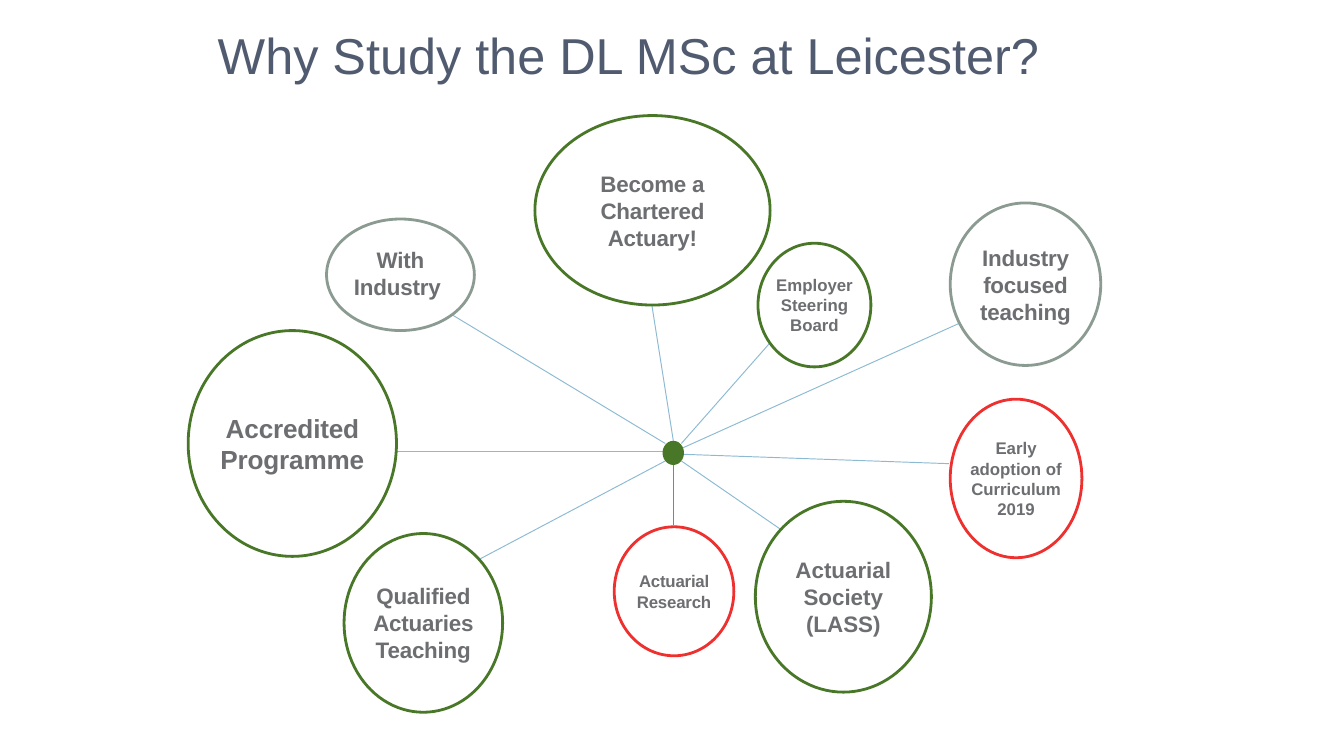
from typing import NamedTuple, Optional

from pptx import Presentation
from pptx.dml.color import RGBColor
from pptx.enum.shapes import MSO_CONNECTOR, MSO_SHAPE
from pptx.enum.text import MSO_ANCHOR, MSO_AUTO_SIZE, PP_ALIGN
from pptx.oxml.ns import qn
from pptx.shapes.autoshape import Shape
from pptx.slide import Slide
from pptx.util import Emu, Pt

PIXEL = 4572
COLORS = {
    "title": "515B70",
    "text": "6D6E71",
    "white": "FFFFFF",
    "green": "497728",
    "red": "EE302F",
    "grey": "8B9B92",
    "spoke": "8CBAD2",
    "dark_spoke": "828386",
}


class Bubble(NamedTuple):
    text: str
    left: int
    top: int
    width: int
    height: int
    outline: str
    size: int = 12
    spacing: Optional[str] = "-10"
    bottom_inset: int = 6


class Spoke(NamedTuple):
    start: tuple[int, int]
    end: tuple[int, int]
    color: str = "spoke"


BUBBLES = [
    Bubble("Early adoption of Curriculum 2019", 1414, 594, 196, 236, "red", 9, None),
    Bubble("Employer Steering Board", 1128, 362, 168, 184, "green", 9, None),
    Bubble("Industry focused teaching", 1414, 302, 224, 242, "grey"),
    Bubble("Actuarial Society (LASS)", 1124, 746, 262, 284, "green", 12, None),
    Bubble("Actuarial Research", 914, 784, 178, 192, "red", 9),
    Bubble("Qualified Actuaries Teaching", 512, 794, 236, 266, "green"),
    Bubble("Accredited Programme", 280, 492, 310, 336, "green", 14),
    Bubble("With Industry ", 486, 326, 220, 166, "grey", bottom_inset=12),
    Bubble("Become a Chartered Actuary!", 796, 172, 350, 282, "green"),
]
SPOKES = [
    Spoke((990, 660), (672, 468)),
    Spoke((588, 672), (986, 672)),
    Spoke((990, 686), (714, 832)),
    Spoke((1014, 686), (1162, 788)),
    Spoke((1004, 672), (1430, 480)),
    Spoke((1014, 676), (1412, 690)),
    Spoke((1146, 510), (1014, 660)),
    Spoke((1002, 686), (1002, 782), "dark_spoke"),
    Spoke((1002, 656), (970, 454)),
]


def px(value: int) -> Emu:
    return Emu(value * PIXEL)


def color(name: str) -> RGBColor:
    return RGBColor.from_string(COLORS[name])


def set_all(target: object, values: dict) -> None:
    for name, value in values.items():
        setattr(target, name, value)


def write_text(box: Shape, text: str, size: int, color_name: str, bold: bool,
               align: PP_ALIGN, spacing: Optional[str] = None) -> None:
    para = box.text_frame.paragraphs[0]
    para.alignment = align
    span = para.add_run()
    span.text = text
    set_all(span.font, {"name": "Arial", "size": Pt(size), "bold": bold})
    span.font.color.rgb = color(color_name)
    if spacing:
        span.font._element.set("spc", spacing)


def add_title(page: Slide, text: str) -> None:
    title = page.shapes.title
    set_all(title, {"left": px(304), "top": px(37), "width": px(1308), "height": px(88)})
    set_all(title.text_frame, {
        "word_wrap": True,
        "auto_size": MSO_AUTO_SIZE.NONE,
        "vertical_anchor": MSO_ANCHOR.MIDDLE,
    })
    write_text(title, text, 27, "title", False, PP_ALIGN.LEFT)


def add_spoke(page: Slide, spoke: Spoke) -> None:
    line = page.shapes.add_connector(
        MSO_CONNECTOR.STRAIGHT, *map(px, spoke.start + spoke.end))
    line.line.color.rgb = color(spoke.color)
    line.line.width = Pt(0.5)
    properties = line._element.spPr
    properties.append(properties.makeelement(qn("a:effectLst"), {}))


def add_oval(page: Slide, left: int, top: int, width: int, height: int, fill: str) -> Shape:
    oval = page.shapes.add_shape(MSO_SHAPE.OVAL, *map(px, (left, top, width, height)))
    oval.shadow.inherit = False
    oval.fill.solid()
    oval.fill.fore_color.rgb = color(fill)
    return oval


def add_bubble(page: Slide, bubble: Bubble) -> None:
    oval = add_oval(page, bubble.left, bubble.top, bubble.width, bubble.height, "white")
    oval.line.color.rgb = color(bubble.outline)
    oval.line.width = Pt(1.5)
    set_all(oval.text_frame, {
        "word_wrap": True,
        "vertical_anchor": MSO_ANCHOR.MIDDLE,
        "margin_left": 0,
        "margin_top": px(6),
        "margin_right": 0,
        "margin_bottom": px(bubble.bottom_inset),
    })
    write_text(oval, bubble.text, bubble.size, "text", True, PP_ALIGN.CENTER, bubble.spacing)


def main() -> None:
    deck = Presentation()
    set_all(deck, {"slide_width": px(2000), "slide_height": px(1125)})
    page = deck.slides.add_slide(deck.slide_layouts[5])
    add_title(page, "Why Study the DL MSc at Leicester?")
    for spoke in SPOKES:
        add_spoke(page, spoke)
    for bubble in BUBBLES:
        add_bubble(page, bubble)
    hub = add_oval(page, 986, 656, 32, 36, "green")
    hub.line.fill.background()
    deck.save("out.pptx")


if __name__ == "__main__":
    main()
